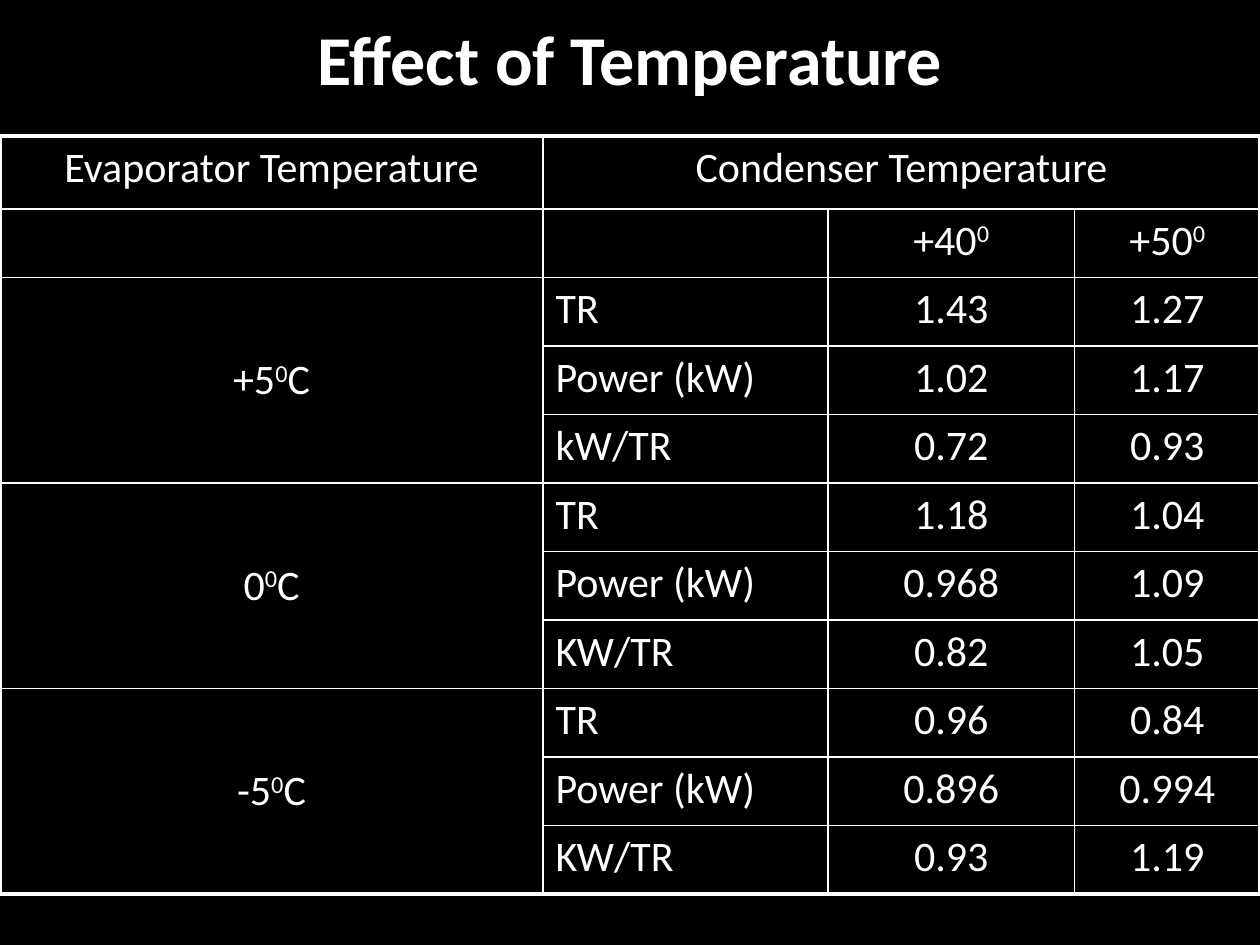
from pptx import Presentation
from pptx.dml.color import RGBColor
from pptx.enum.text import MSO_ANCHOR as Anchor, PP_ALIGN as Align
from pptx.oxml import parse_xml
from pptx.oxml.ns import nsdecls
from pptx.util import Inches, Pt

THEME = {"font": "Calibri", "ink": "FFFFFF", "ground": "000000",
         "title": 40, "body": 24, "outer": 2.25, "inner": 1}

TITLE = "Effect of Temperature"
HEADER = ["Evaporator Temperature", "Condenser Temperature", "", ""]
SUBHEADER = ["", "", "+40^0", "+50^0"]
GROUPS = [
    ("+5^0^C", [("TR", "1.43", "1.27"),
                ("Power (kW)", "1.02", "1.17"),
                ("kW/TR", "0.72", "0.93")]),
    ("0^0^C", [("TR", "1.18", "1.04"),
               ("Power (kW)", "0.968", "1.09"),
               ("KW/TR", "0.82", "1.05")]),
    ("-5^0^C", [("TR", "0.96", "0.84"),
                ("Power (kW)", "0.896", "0.994"),
                ("KW/TR", "0.93", "1.19")]),
]
COL_WIDTHS = [4.31, 2.26, 1.96, 1.47]
TABLE_TOP, TABLE_HEIGHT, HEADER_HEIGHT = 1.08, 6.02, 0.58


def write(tf, text, size, align, bold=False):
    p = tf.paragraphs[0]
    p.alignment = align
    for i, part in enumerate(text.split("^")):
        if not part:
            continue
        r = p.add_run()
        r.text = part
        r.font.color.rgb = RGBColor.from_string(THEME["ink"])
        formats = {"name": THEME["font"], "size": Pt(size), "bold": bold}
        for key, value in formats.items():
            setattr(r.font, key, value)
        if i % 2:
            r.font._element.set("baseline", "30000")


def add_borders(cell, outer_sides):
    tc_pr = cell._tc.get_or_add_tcPr()
    for i, side in enumerate("LRTB"):
        width = Pt(THEME["outer" if side in outer_sides else "inner"])
        tc_pr.insert(i, parse_xml(
            f'<a:ln{side} {nsdecls("a")} w="{width}"><a:solidFill>'
            f'<a:srgbClr val="{THEME["ink"]}"/></a:solidFill></a:ln{side}>'))


def add_title(s):
    sp = s.shapes.add_textbox(0, 0, Inches(10), Inches(0.92))
    tf = sp.text_frame
    tf.word_wrap = True
    tf.vertical_anchor = Anchor.MIDDLE
    write(tf, TITLE, THEME["title"], Align.CENTER, True)


def add_results(s):
    rows = [HEADER, SUBHEADER]
    merges = [((0, 1), (0, 3))]
    for label, lines in GROUPS:
        first = len(rows)
        rows += [[label if i == 0 else "", *line] for i, line in enumerate(lines)]
        merges.append(((first, 0), (len(rows) - 1, 0)))

    n_rows, n_cols = len(rows), len(COL_WIDTHS)
    table = s.shapes.add_table(n_rows, n_cols, 0, Inches(TABLE_TOP),
                               Inches(10), Inches(TABLE_HEIGHT)).table
    table.first_row = table.horz_banding = False
    for col, width in zip(table.columns, COL_WIDTHS):
        col.width = Inches(width)
    for row in table.rows:
        row.height = Inches((TABLE_HEIGHT - HEADER_HEIGHT) / (n_rows - 1))
    table.rows[0].height = Inches(HEADER_HEIGHT)
    for start, end in merges:
        table.cell(*start).merge(table.cell(*end))

    for i, row in enumerate(rows):
        for j, text in enumerate(row):
            cell = table.cell(i, j)
            cell.fill.background()
            last_row, last_col = i, j
            if cell.is_merge_origin:
                last_row += cell.span_height - 1
                last_col += cell.span_width - 1
            edges = {"L": j == 0, "R": last_col == n_cols - 1,
                     "T": i == 0, "B": last_row == n_rows - 1}
            add_borders(cell, [side for side, outer in edges.items() if outer])
            if j == 0 and i > 1:
                cell.vertical_anchor = Anchor.MIDDLE
            align = Align.LEFT if j == 1 and i > 1 else Align.CENTER
            write(cell.text_frame, text, THEME["body"], align)


def main():
    prs = Presentation()
    prs.slide_width, prs.slide_height = Inches(10), Inches(7.5)
    s = prs.slides.add_slide(prs.slide_layouts[6])
    fill = s.background.fill
    fill.solid()
    fill.fore_color.rgb = RGBColor.from_string(THEME["ground"])
    add_title(s)
    add_results(s)
    prs.save("out.pptx")


if __name__ == "__main__":
    main()
